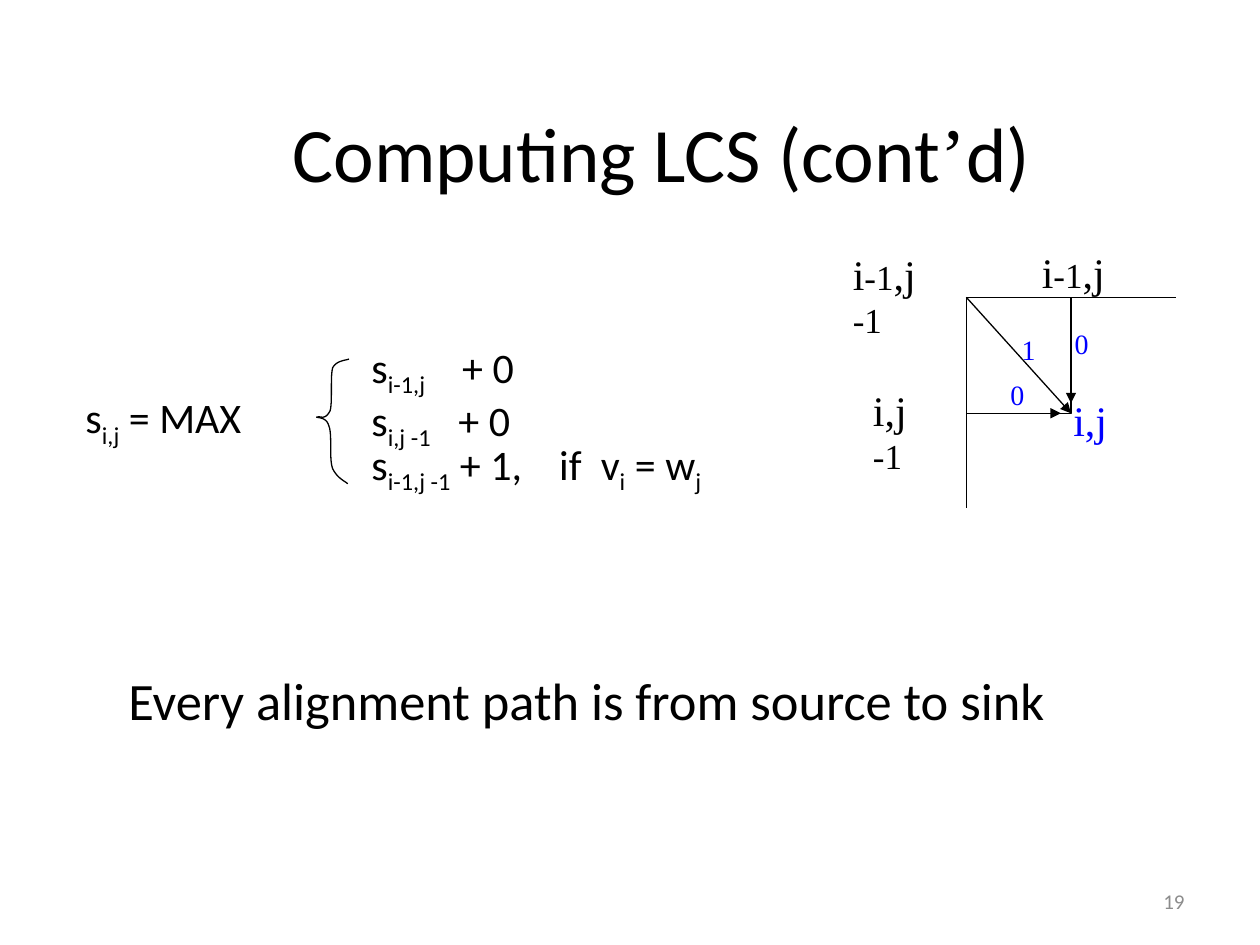
from dataclasses import dataclass

from lxml.etree import SubElement
from pptx import Presentation
from pptx.dml.color import RGBColor
from pptx.enum.shapes import MSO_CONNECTOR, MSO_SHAPE
from pptx.enum.text import MSO_ANCHOR, PP_ALIGN
from pptx.oxml.ns import qn
from pptx.util import Inches, Pt

BLACK, BLUE, GREY = "000000", "0000FF", "8C8C8C"
SANS, SERIF = "Calibri", "Times New Roman"
LEFT, MIDDLE, RIGHT = 7.67, 8.5, 9.33
TOP, BOTTOM, END = 2.36, 3.28, 4.03


@dataclass
class Run:
    text: str
    size: float = 24
    font: str = SANS
    color: str = BLACK
    baseline: int = 0


@dataclass
class Label:
    box: tuple[float, float, float, float]
    runs: list[Run]
    wrap: bool = False
    align: PP_ALIGN = PP_ALIGN.LEFT
    anchor: MSO_ANCHOR = MSO_ANCHOR.TOP
    tabs: tuple[float, ...] = ()


@dataclass
class Edge:
    start: tuple[float, float]
    end: tuple[float, float]
    arrow: bool = False


def rgb(value: str) -> RGBColor:
    return RGBColor.from_string(value)


def sub(text: str) -> Run:
    return Run(text, baseline=-25)


def node(*parts: str) -> list[Run]:
    return [Run(part, 20 if part == "-1" else 24, SERIF) for part in parts]


def blue(text: str, size: float = 16) -> list[Run]:
    return [Run(text, size, SERIF, BLUE)]


def draw_label(slide, label: Label) -> None:
    frame = slide.shapes.add_textbox(*map(Inches, label.box)).text_frame
    frame.word_wrap = label.wrap
    frame.vertical_anchor = label.anchor
    paragraph = frame.paragraphs[0]
    paragraph.alignment = label.align
    if label.tabs:
        tab_list = SubElement(paragraph._p.get_or_add_pPr(), qn("a:tabLst"))
        for position in label.tabs:
            SubElement(tab_list, qn("a:tab"), pos=str(Inches(position)), algn="l")
    for item in label.runs:
        run = paragraph.add_run()
        run.text = item.text
        for name, value in {"size": Pt(item.size), "name": item.font}.items():
            setattr(run.font, name, value)
        run.font.color.rgb = rgb(item.color)
        if item.baseline:
            run.font._element.set("baseline", str(item.baseline * 1000))


def outline(shape) -> None:
    shape.line.color.rgb = rgb(BLACK)
    shape.line.width = Pt(0.75)


def draw_edge(slide, edge: Edge) -> None:
    connector = slide.shapes.add_connector(
        MSO_CONNECTOR.STRAIGHT, *map(Inches, edge.start + edge.end))
    outline(connector)
    if edge.arrow:
        SubElement(connector.line._get_or_add_ln(), qn("a:tailEnd"), type="triangle")
    SubElement(connector._element.spPr, qn("a:effectLst"))


def draw_curve(slide, points: list[tuple[float, float]], steps: int = 12) -> None:
    """Draw chained cubic curves: a start, then three points for each curve."""
    path = []
    for first in range(0, len(points) - 1, 3):
        for step in range(1, steps + 1):
            t = step / steps
            weights = ((1 - t) ** 3, 3 * t * (1 - t) ** 2, 3 * t * t * (1 - t), t ** 3)
            path.append(tuple(
                Inches(sum(w * p[axis] for w, p in zip(weights, points[first:first + 4])))
                for axis in (0, 1)))
    builder = slide.shapes.build_freeform(*map(Inches, points[0]))
    builder.add_line_segments(path, close=False)
    shape = builder.convert_to_shape()
    shape.fill.background()
    shape.shadow.inherit = False
    outline(shape)


BRACE = [
    [(2.77, 2.85), (2.75, 2.86), (2.67, 2.86), (2.64, 2.92), (2.62, 2.99),
     (2.64, 3.2), (2.62, 3.26), (2.58, 3.34), (2.54, 3.3), (2.52, 3.31)],
    [(2.51, 3.31), (2.53, 3.32), (2.59, 3.31), (2.61, 3.38), (2.64, 3.45),
     (2.61, 3.64), (2.64, 3.72), (2.68, 3.8), (2.74, 3.82), (2.76, 3.84)],
]
EDGES = [
    Edge((LEFT, TOP), (RIGHT, TOP)),
    Edge((LEFT, TOP), (LEFT, END)),
    Edge((LEFT, TOP), (MIDDLE, BOTTOM), True),
    Edge((LEFT, BOTTOM), (8.42, BOTTOM), True),
    Edge((MIDDLE, TOP), (MIDDLE, 3.2), True),
]
FORMULA = [
    Label((0.58, 3.06, 1.71, 0.5), [Run("s"), sub("i,j"), Run(" = MAX")]),
    Label((2.85, 2.66, 1.66, 0.5), [Run("s"), sub("i-1,j"), Run("\t+ 0")], True, tabs=(0.72,)),
    Label((2.85, 3.08, 1.63, 0.5), [Run("s"), sub("i,j -1"), Run("\t+ 0")], True, tabs=(0.69,)),
    Label((2.85, 3.43, 4, 0.5),
          [Run("s"), sub("i-1,j -1"), Run(" + 1,\tif\tv"), sub("i"), Run(" = w"), sub("j")],
          True, tabs=(1.49, 1.82)),
]
GRID_LABELS = [
    Label((8.42, 3.08, 0.47, 0.5), blue("i,j", 24)),
    Label((8.17, 1.91, 0.7, 0.5), node("i", "-1", ",j")),
    Label((6.83, 3, 0.78, 0.5), node("i,j ", "-1")),
    Label((6.67, 1.92, 1.01, 0.5), node("i", "-1", ",j ", "-1")),
    Label((8.01, 2.59, 0.31, 0.37), blue("1")),
    Label((8.43, 2.54, 0.31, 0.37), blue("0")),
    Label((7.92, 2.95, 0.31, 0.37), blue("0")),
]
TITLE = Label((0.5, 0.58, 9.5, 1.25),
              [Run("Computing LCS (cont", 44), Run("’", 44, SERIF), Run("d)", 44)],
              True, PP_ALIGN.CENTER, MSO_ANCHOR.MIDDLE)
NUMBER = Label((7.17, 6.95, 2.33, 0.4), [Run("19", 12, color=GREY)],
               True, PP_ALIGN.RIGHT, MSO_ANCHOR.MIDDLE)
STATEMENT = Label((0.92, 5.25, 8.25, 0.91),
                  [Run("Every alignment path is from source to sink", 30)], True)


def main() -> None:
    presentation = Presentation()
    presentation.slide_width, presentation.slide_height = Inches(10), Inches(7.5)
    slide = presentation.slides.add_slide(presentation.slide_layouts[6])
    draw_label(slide, TITLE)
    for half in BRACE:
        draw_curve(slide, half)
    cell = slide.shapes.add_shape(
        MSO_SHAPE.RECTANGLE, *map(Inches, (LEFT, TOP, MIDDLE - LEFT, BOTTOM - TOP)))
    cell.fill.background()
    cell.shadow.inherit = False
    outline(cell)
    for edge in EDGES:
        draw_edge(slide, edge)
    for label in [*FORMULA, *GRID_LABELS, NUMBER, STATEMENT]:
        draw_label(slide, label)
    presentation.save("out.pptx")


if __name__ == "__main__":
    main()
